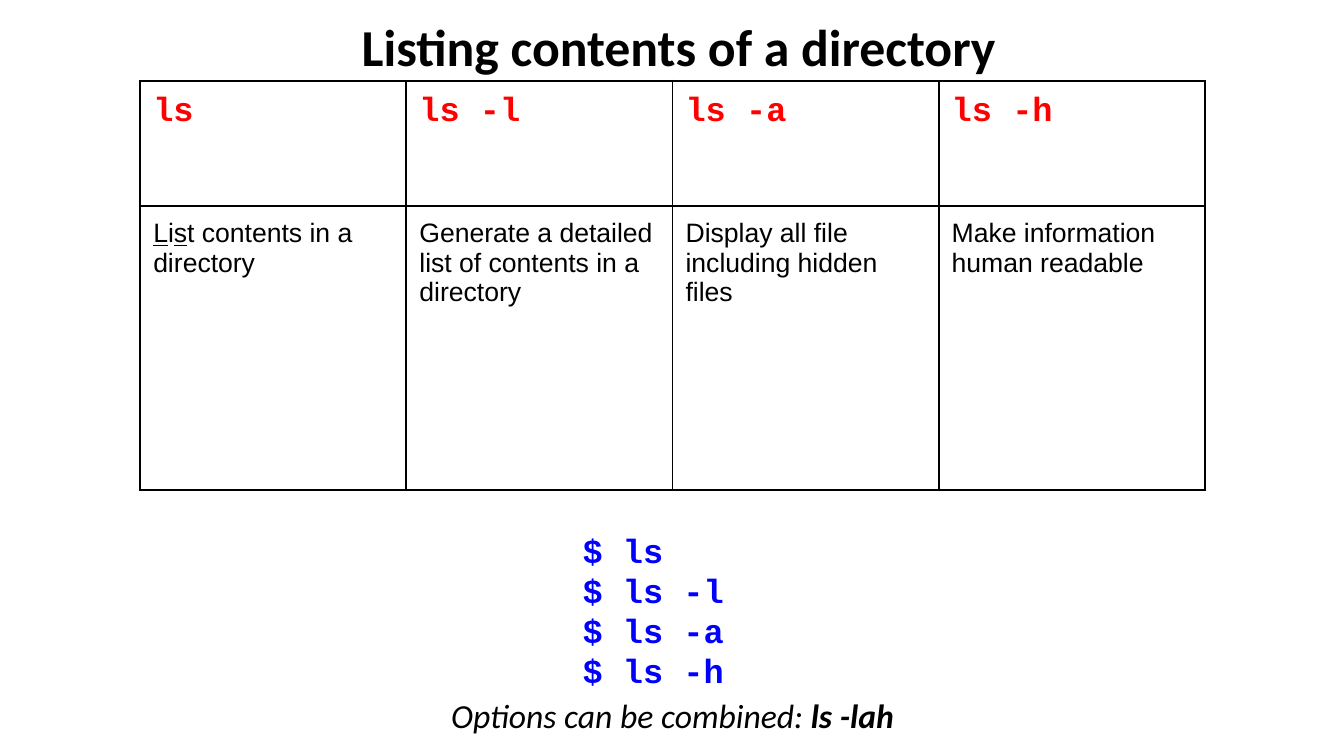
from lxml import etree
from pptx import Presentation, util as u
from pptx.dml.color import RGBColor
from pptx.enum import text
from pptx.oxml import ns

BLACK = RGBColor(0, 0, 0)
RED = RGBColor(255, 0, 0)
BLUE = RGBColor(0, 0, 255)

TITLE = {"name": "Calibri", "size": u.Pt(37), "bold": True}
COMMAND = {"name": "Courier New", "size": u.Pt(24), "bold": True}
DESCRIPTION = {"name": "Arial", "size": u.Pt(19), "bold": False}
NOTE = {"name": "Calibri", "size": u.Pt(24), "italic": True}

COLUMNS = [
    ("ls", [("L", True), ("i", False), ("s", True), ("t contents in a directory", False)]),
    ("ls -l", [("Generate a detailed list of contents in a directory", False)]),
    ("ls -a", [("Display all file including hidden files", False)]),
    ("ls -h", [("Make information human readable", False)]),
]
ROW_HEIGHTS = (1.24, 2.82)


def set_values(target, values):
    """Set each named attribute on the target."""
    for name, value in values.items():
        setattr(target, name, value)


def add_run(paragraph, wording, style, color=BLACK, **extra):
    """Append a formatted run to a paragraph."""
    run = paragraph.add_run()
    run.text = wording
    set_values(run.font, {**style, **extra})
    run.font.color.rgb = color


def set_margins(holder, inset):
    """Give a cell or text frame equal margins."""
    for side in ("left", "top", "right", "bottom"):
        setattr(holder, f"margin_{side}", u.Inches(inset))


def add_text_frame(slide, box, inset=0.13):
    """Add a wrapping text box and return its text frame."""
    frame = slide.shapes.add_textbox(*map(u.Inches, box)).text_frame
    set_values(frame, {"word_wrap": True, "vertical_anchor": text.MSO_ANCHOR.TOP})
    set_margins(frame, inset)
    return frame


def add_title(slide, box):
    """Add the centred heading."""
    paragraph = add_text_frame(slide, box).paragraphs[0]
    paragraph.alignment = text.PP_ALIGN.CENTER
    add_run(paragraph, "Listing contents of a directory ", TITLE)


def format_cell(cell):
    """Clear the cell's fill and draw its borders."""
    set_margins(cell, 0.13)
    properties = cell._tc.get_or_add_tcPr()
    for edge in ("a:lnL", "a:lnR", "a:lnT", "a:lnB"):
        line = etree.SubElement(properties, ns.qn(edge), w=str(u.Pt(1.5)))
        fill = etree.SubElement(line, ns.qn("a:solidFill"))
        etree.SubElement(fill, ns.qn("a:srgbClr"), val=str(BLACK))
    cell.fill.background()


def add_command_table(slide, box):
    """Add the table of commands above their descriptions."""
    frame = slide.shapes.add_table(len(ROW_HEIGHTS), len(COLUMNS), *map(u.Inches, box))
    table = frame.table
    set_values(table, {"first_row": False, "horz_banding": False})
    for row, height in zip(table.rows, ROW_HEIGHTS):
        row.height = u.Inches(height)
    for index, (command, description) in enumerate(COLUMNS):
        table.columns[index].width = u.Inches(box[2] / len(COLUMNS))
        heading, body = table.cell(0, index), table.cell(1, index)
        for cell in (heading, body):
            format_cell(cell)
        add_run(heading.text_frame.paragraphs[0], command, COMMAND, RED)
        for wording, underline in description:
            add_run(body.text_frame.paragraphs[0], wording, DESCRIPTION, underline=underline)


def add_note(slide, box):
    """Add the closing remark on combined options."""
    paragraph = add_text_frame(slide, box).paragraphs[0]
    set_values(paragraph, {"alignment": text.PP_ALIGN.CENTER, "space_before": u.Pt(9)})
    add_run(paragraph, "Options can be combined: ", NOTE)
    add_run(paragraph, "ls -lah", NOTE, bold=True)


def add_shell_lines(slide, box):
    """Add one shell prompt line for each command."""
    frame = add_text_frame(slide, box, 0.1)
    frame.margin_top = u.Inches(0.14)
    for index, (command, _) in enumerate(COLUMNS):
        paragraph = frame.add_paragraph() if index else frame.paragraphs[0]
        paragraph.line_spacing = u.Pt(28.6)
        add_run(paragraph, f"$ {command}", COMMAND, BLUE)


def main():
    """Build and save the slide."""
    presentation = Presentation()
    set_values(presentation, {"slide_width": u.Inches(13.33), "slide_height": u.Inches(7.5)})
    slide = presentation.slides.add_slide(presentation.slide_layouts[6])
    add_title(slide, (0.58, 0.02, 12.42, 0.83))
    add_command_table(slide, (1.39, 0.8, 10.56, sum(ROW_HEIGHTS)))
    add_note(slide, (1.43, 6.76, 10.48, 0.83))
    add_shell_lines(slide, (5.68, 5.12, 2.22, 1.72))
    presentation.save("out.pptx")


if __name__ == "__main__":
    main()
